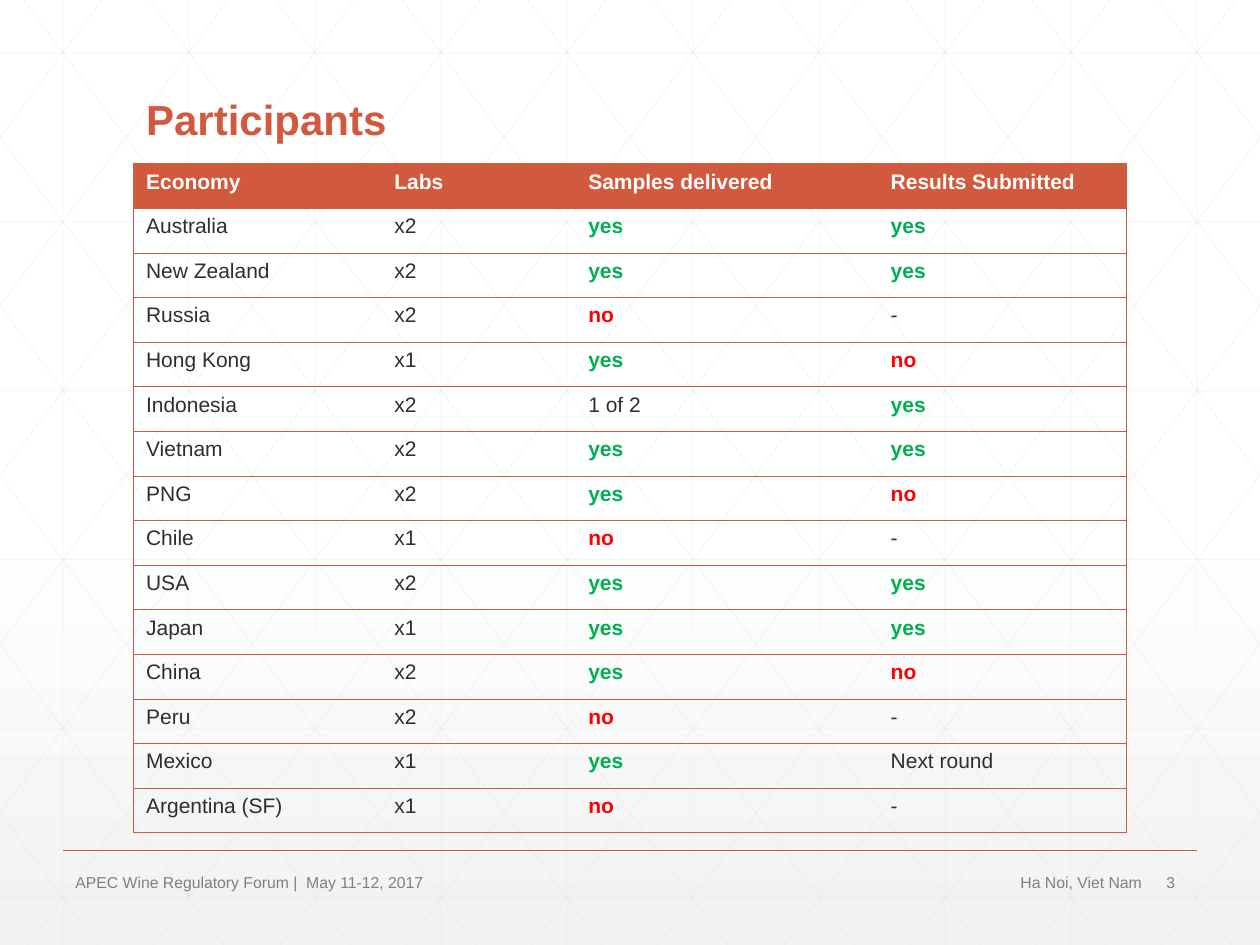
"""Build the Participants slide: a lab status table over a lattice background."""
from lxml import etree
from pptx import Presentation
from pptx import util as u
from pptx.dml.color import RGBColor
from pptx.enum import shapes, text
from pptx.oxml import ns

ACCENT, INK, GREY, PALE = "D15A3E", "2D2E2D", "808080", "D9D9D9"
WHITE, GREEN, RED = "FFFFFF", "00B050", "FF0000"
STATUS = {"yes": GREEN, "no": RED}
NO_GRID = "{2D5ABB26-0587-4C30-8999-92F81FD0307C}"
W, H = 10, 7.5
ROWS = [
    ("Economy", "Labs", "Samples delivered", "Results Submitted"),
    ("Australia", "x2", "yes", "yes"),
    ("New Zealand", "x2", "yes", "yes"),
    ("Russia", "x2", "no", "-"),
    ("Hong Kong", "x1", "yes", "no"),
    ("Indonesia", "x2", "1 of 2", "yes"),
    ("Vietnam", "x2", "yes", "yes"),
    ("PNG", "x2", "yes", "no"),
    ("Chile", "x1", "no", "-"),
    ("USA", "x2", "yes", "yes"),
    ("Japan", "x1", "yes", "yes"),
    ("China", "x2", "yes", "no"),
    ("Peru", "x2", "no", "-"),
    ("Mexico", "x1", "yes", "Next round"),
    ("Argentina (SF)", "x1", "no", "-"),
]


def rgb(value):
    """Return the colour for a hex string."""
    return RGBColor.from_string(value)


def write(tf, words, size=12, color=INK, bold=False, align=None, spacing=None):
    """Put one formatted run in a text frame."""
    p = tf.paragraphs[0]
    p.alignment = align
    p.line_spacing = spacing
    r = p.add_run()
    r.text = words
    r.font.name = "Arial"
    r.font.size = u.Pt(size)
    r.font.bold = bold
    r.font.color.rgb = rgb(color)


def border(cell, sides, color=ACCENT, width=0.5):
    """Draw the named sides of a table cell."""
    tcPr = cell._tc.get_or_add_tcPr()
    for i, side in enumerate(sides):
        ln = etree.Element(ns.qn(f"a:ln{side}"), w=str(u.Pt(width)))
        fill = etree.SubElement(ln, ns.qn("a:solidFill"))
        etree.SubElement(fill, ns.qn("a:srgbClr"), val=color)
        tcPr.insert(i, ln)


class Deck:
    """Hold the style and the current slide."""

    def __init__(self):
        """Start a deck with one title-only slide."""
        self.prs = Presentation()
        self.prs.slide_width, self.prs.slide_height = u.Inches(W), u.Inches(H)
        self.s = self.prs.slides.add_slide(self.prs.slide_layouts[5])

    def background(self):
        """Fade the background from white to pale grey."""
        fill = self.s.background.fill
        fill.gradient()
        fill.gradient_angle = 270
        for stop, color, pos in zip(fill.gradient_stops, (WHITE, "F2F2F2"), (0.53, 1)):
            stop.color.rgb = rgb(color)
            stop.position = pos

    def line(self, parent, start, end, color=ACCENT, width=1, alpha=None):
        """Draw a straight line, see-through if alpha is given."""
        ends = [u.Inches(v) for v in (*start, *end)]
        c = parent.shapes.add_connector(shapes.MSO_CONNECTOR.STRAIGHT, *ends)
        c.line.color.rgb = rgb(color)
        c.line.width = u.Pt(width)
        spPr = c._element.spPr
        if alpha:
            clr = spPr.find(".//" + ns.qn("a:srgbClr"))
            etree.SubElement(clr, ns.qn("a:alpha"), val=str(alpha * 1000))
        etree.SubElement(spPr, ns.qn("a:effectLst"))

    def lattice(self, run=5.59):
        """Draw the grid and both sets of diagonals, clipped to the slide."""
        slope = H / run
        lines = [((i + 0.5, 0), (i + 0.5, H)) for i in range(W)]
        lines += [((0, 0.42 + 1.34 * i), (W, 0.42 + 1.34 * i)) for i in range(6)]
        for i in range(-5, W):
            top = i + 0.19
            x1, x2 = max(top, 0), min(top + run, W)
            y1, y2 = (x1 - top) * slope, (x2 - top) * slope
            lines += [((x1, y1), (x2, y2)), ((W - x1, y1), (W - x2, y2))]
        group = self.s.shapes.add_group_shape()
        for start, end in lines:
            self.line(group, start, end, PALE, 0.5, alpha=25)

    def title(self, words, x, y, w, h):
        """Fill the title placeholder and bring it in front of the lattice."""
        sp = self.s.shapes.title
        sp.left, sp.top, sp.width, sp.height = map(u.Inches, (x, y, w, h))
        tf = sp.text_frame
        tf.vertical_anchor = text.MSO_ANCHOR.BOTTOM
        write(tf, words, 24, ACCENT, True, text.PP_ALIGN.LEFT, 0.9)
        sp._element.getparent().append(sp._element)

    def table(self, rows, x, y, widths, h):
        """Add the table with a filled header and ruled rows."""
        frame = self.s.shapes.add_table(
            len(rows), len(widths), *map(u.Inches, (x, y, sum(widths), h)))
        table = frame.table
        table.horz_banding = False
        table._tbl.tblPr.find(ns.qn("a:tableStyleId")).text = NO_GRID
        for col, width in zip(table.columns, widths):
            col.width = u.Inches(width)
        for i, row in enumerate(rows):
            for j, words in enumerate(row):
                cell = table.cell(i, j)
                if i == 0:
                    cell.fill.solid()
                    cell.fill.fore_color.rgb = rgb(ACCENT)
                    color = WHITE
                else:
                    cell.fill.background()
                    color = STATUS.get(words, INK)
                write(cell.text_frame, words, color=color, bold=color != INK)
                border(cell, {0: "LTB", len(row) - 1: "RTB"}.get(j, "TB"))

    def footer(self, words, x, w, align=text.PP_ALIGN.LEFT):
        """Add one small grey text box in the footer row."""
        sp = self.s.shapes.add_textbox(*map(u.Inches, (x, 6.88, w, 0.24)))
        tf = sp.text_frame
        tf.word_wrap = True
        tf.vertical_anchor = text.MSO_ANCHOR.MIDDLE
        write(tf, words, 9, GREY, align=align)


def main():
    """Build and save the slide."""
    deck = Deck()
    deck.background()
    deck.lattice()
    deck.line(deck.s, (0.5, 6.75), (9.5, 6.75))
    deck.title("Participants", 1.06, 0.55, 7.88, 0.65)
    deck.table(ROWS, 1.06, 1.3, (1.97, 1.54, 2.4, 1.97), 5.31)
    deck.footer("3", 9.16, 0.34)
    deck.footer("APEC Wine Regulatory Forum |  May 11-12, 2017", 0.5, 5.03)
    deck.footer("Ha Noi, Viet Nam", 5.58, 3.58, text.PP_ALIGN.RIGHT)
    deck.prs.save("out.pptx")


if __name__ == "__main__":
    main()
